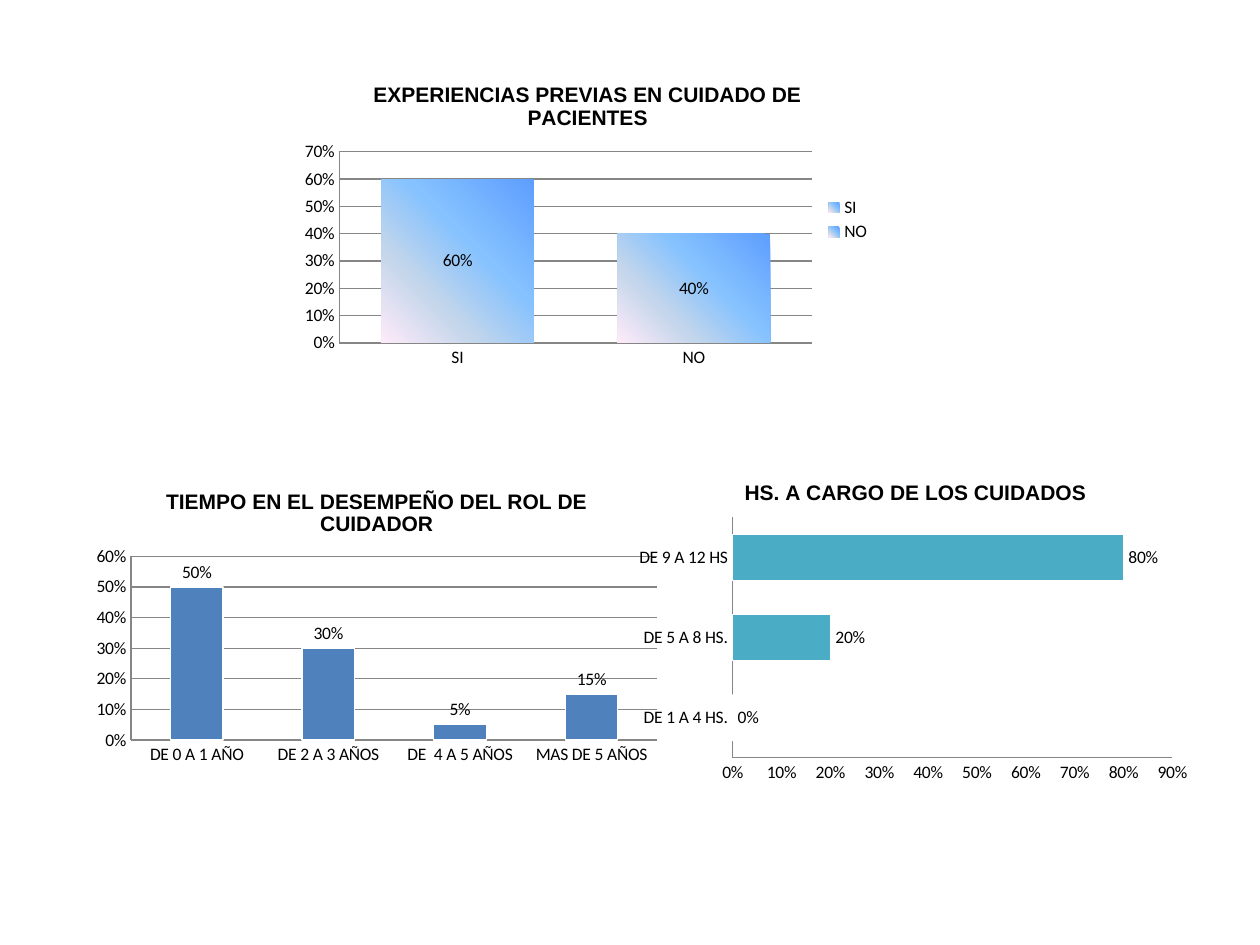
import pptx
import pptx.chart.data
import pptx.dml.color
import pptx.enum.chart
import pptx.oxml
import pptx.oxml.ns
import pptx.util
from pptx.util import Cm

RGBColor = pptx.dml.color.RGBColor
ChartType = pptx.enum.chart.XL_CHART_TYPE
LabelPosition = pptx.enum.chart.XL_LABEL_POSITION

BLACK = RGBColor(0x00, 0x00, 0x00)
WHITE = RGBColor(0xFF, 0xFF, 0xFF)
GRAY = RGBColor(0x86, 0x86, 0x86)
BLUE = RGBColor(0x4F, 0x81, 0xBD)
TEAL = RGBColor(0x4B, 0xAC, 0xC6)

# Gradient stops: percent along the fill and colour
SKY_STOPS = [
    (0, RGBColor(0x5E, 0x9E, 0xFF)),
    (40, RGBColor(0x85, 0xC2, 0xFF)),
    (70, RGBColor(0xC4, 0xD6, 0xEB)),
    (100, RGBColor(0xFF, 0xEB, 0xFA)),
]
SKY_ANGLE = 135

# Content: frame in cm, plot area as fractions of the frame (x, y, w, h)
CHARTS = [
    dict(title="EXPERIENCIAS PREVIAS EN CUIDADO DE PACIENTES",
         type=ChartType.COLUMN_STACKED, series="",
         values=[("SI", 0.6), ("NO", 0.4)], maximum=0.7,
         frame=(5.89, 1.32, 11.91, 6.22), plot=(0.08, 0.28, 0.8, 0.62),
         gap=55, color=None, grid=True, legend=True,
         labels=LabelPosition.CENTER),
    dict(title="TIEMPO EN EL DESEMPEÑO DEL ROL DE CUIDADOR",
         type=ChartType.COLUMN_CLUSTERED, series="Series 1",
         values=[("DE 0 A 1 AÑO", 0.5), ("DE 2 A 3 AÑOS", 0.3),
                 ("DE  4 A 5 AÑOS", 0.05), ("MAS DE 5 AÑOS", 0.15)],
         maximum=0.6,
         frame=(1.7, 9.52, 11.79, 6.07), plot=(0.08, 0.28, 0.9, 0.61),
         gap=150, color=BLUE, grid=True, legend=False,
         labels=LabelPosition.OUTSIDE_END),
    dict(title="HS. A CARGO DE LOS CUIDADOS",
         type=ChartType.BAR_CLUSTERED, series="Series 1",
         values=[("DE 1 A 4 HS.", 0), ("DE 5 A 8 HS.", 0.2),
                 ("DE 9 A 12 HS", 0.8)],
         maximum=0.9,
         frame=(12.7, 9.32, 11.51, 6.55), plot=(0.18, 0.17, 0.77, 0.74),
         gap=75, color=TEAL, grid=False, legend=False,
         labels=LabelPosition.OUTSIDE_END),
]


def set_font(font, name, size, bold):
    font.name = name
    font.size = pptx.util.Pt(size)
    font.bold = bold
    font.color.rgb = BLACK


def set_line(line, color):
    line.color.rgb = color
    line.width = pptx.util.Pt(0.75)


def set_title(chart, text):
    chart.has_title = True
    chart.chart_title.include_in_layout = False
    paragraph = chart.chart_title.text_frame.paragraphs[0]
    run = paragraph.add_run()
    run.text = text
    set_font(run.font, "Arial", 12, True)


def place_plot(chart, fractions):
    """Fix the inner plot area inside the chart frame."""
    plot_area = chart.plots[0]._element.getparent()
    for old in plot_area.findall(pptx.oxml.ns.qn("c:layout")):
        plot_area.remove(old)
    sizes = "".join(f'<c:{tag} val="{value}"/>'
                    for tag, value in zip("xywh", fractions))
    plot_area.insert(0, pptx.oxml.parse_xml(
        f'<c:layout {pptx.oxml.ns.nsdecls("c")}><c:manualLayout>'
        '<c:layoutTarget val="inner"/><c:xMode val="edge"/>'
        f'<c:yMode val="edge"/>{sizes}</c:manualLayout></c:layout>'))


def fill_gradient(chart_format):
    chart_format.fill.gradient()
    gradient = chart_format._element.spPr.find(pptx.oxml.ns.qn("a:gradFill"))
    stops = "".join(f'<a:gs pos="{position * 1000}"><a:srgbClr val="{color}"/></a:gs>'
                    for position, color in SKY_STOPS)
    gradient.getparent().replace(gradient, pptx.oxml.parse_xml(
        f'<a:gradFill {pptx.oxml.ns.nsdecls("a")}><a:gsLst>{stops}</a:gsLst>'
        f'<a:lin ang="{SKY_ANGLE * 60000}" scaled="0"/></a:gradFill>'))


def format_axes(chart, content):
    for axis in (chart.category_axis, chart.value_axis):
        axis.major_tick_mark = pptx.enum.chart.XL_TICK_MARK.NONE
        axis.minor_tick_mark = pptx.enum.chart.XL_TICK_MARK.NONE
        axis.has_major_gridlines = False
        set_line(axis.format.line, GRAY)
    axis = chart.value_axis
    axis.minimum_scale = 0
    axis.maximum_scale = content["maximum"]
    axis.major_unit = 0.1
    axis.tick_labels.number_format = "0%"
    axis.tick_labels.number_format_is_linked = False
    axis.has_major_gridlines = content["grid"]
    if content["grid"]:
        set_line(axis.major_gridlines.format.line, GRAY)


def format_bars(plot, content):
    plot.gap_width = content["gap"]
    plot.vary_by_categories = content["legend"]
    series = plot.series[0]
    series.invert_if_negative = False
    if content["color"] is None:
        points = [series.points[i] for i in range(len(content["values"]))]
        for part in [series, *points]:
            fill_gradient(part.format)
    else:
        series.format.fill.solid()
        series.format.fill.fore_color.rgb = content["color"]
        set_line(series.format.line, WHITE)
    labels = series.data_labels
    labels.show_value = True
    labels.number_format = "0%"
    labels.number_format_is_linked = False
    labels.position = content["labels"]
    set_font(labels.font, "Calibri", 10, False)


def add_bar_chart(slide, content):
    categories, values = zip(*content["values"])
    data = pptx.chart.data.CategoryChartData(number_format="0%")
    data.categories = categories
    data.add_series(content["series"], values)
    frame = [Cm(length) for length in content["frame"]]
    chart = slide.shapes.add_chart(content["type"], *frame, data).chart
    set_font(chart.font, "Calibri", 10, False)
    set_title(chart, content["title"])
    place_plot(chart, content["plot"])
    format_axes(chart, content)
    format_bars(chart.plots[0], content)
    chart.has_legend = content["legend"]
    if content["legend"]:
        chart.legend.position = pptx.enum.chart.XL_LEGEND_POSITION.RIGHT
        chart.legend.include_in_layout = False


def main():
    presentation = pptx.Presentation()
    presentation.slide_width = Cm(25.4)
    presentation.slide_height = Cm(19.05)
    slide = presentation.slides.add_slide(presentation.slide_layouts[6])
    slide.background.fill.solid()
    slide.background.fill.fore_color.rgb = WHITE
    for content in CHARTS:
        add_bar_chart(slide, content)
    presentation.save("out.pptx")


if __name__ == "__main__":
    main()
